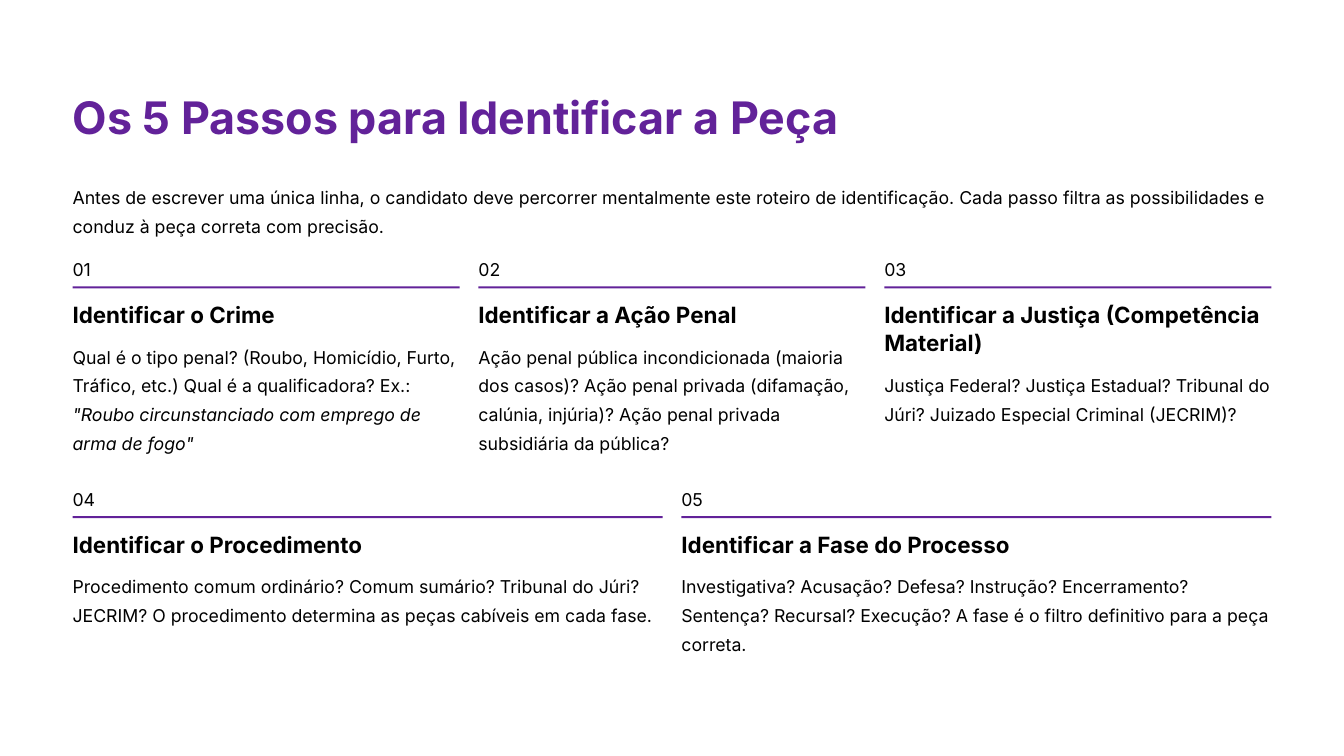
import dataclasses

import pptx
import pptx.dml.color
import pptx.enum.shapes
import pptx.enum.text
import pptx.shapes.autoshape
import pptx.slide
import pptx.text.text
import pptx.util

PURPLE = pptx.dml.color.RGBColor(0x62, 0x22, 0x99)
BLACK = pptx.dml.color.RGBColor(0, 0, 0)
FONT = "Inter"
SLIDE_W = 10
SLIDE_H = SLIDE_W * 9 / 16
MARGIN = 0.54
GAP = 0.14
CONTENT_W = SLIDE_W - 2 * MARGIN
HEADING_LINE = 0.21
RULE_H = 1.1 / 72
TOP = pptx.enum.text.MSO_ANCHOR.TOP
MIDDLE = pptx.enum.text.MSO_ANCHOR.MIDDLE


@dataclasses.dataclass(frozen=True)
class Style:
    size: float
    leading: float | None = None
    bold: bool = False
    color: pptx.dml.color.RGBColor = BLACK


@dataclasses.dataclass(frozen=True)
class Box:
    x: float
    y: float
    w: float
    h: float

    def emu(self) -> list[int]:
        return [pptx.util.Inches(v) for v in (self.x, self.y, self.w, self.h)]


@dataclasses.dataclass(frozen=True)
class Step:
    heading: str
    heading_w: float
    body: str
    example: str = ""
    heading_lines: int = 1


@dataclasses.dataclass(frozen=True)
class Row:
    top: float
    bottom: float
    steps: tuple[Step, ...]


TITLE = Style(24, 30.5, True, PURPLE)
HEADING = Style(12, 15, True)
BODY = Style(9.5, 15.5)
NUMBER = Style(9.5)

ROWS = (
    Row(1.92, 3.39, (
        Step("Identificar o Crime", 1.7,
             "Qual é o tipo penal? (Roubo, Homicídio, Furto, Tráfico, etc.) "
             "Qual é a qualificadora? Ex.: ",
             example='"Roubo circunstanciado com emprego de arma de fogo"'),
        Step("Identificar a Ação Penal", 1.96,
             "Ação penal pública incondicionada (maioria dos casos)? Ação penal "
             "privada (difamação, calúnia, injúria)? Ação penal privada "
             "subsidiária da pública?"),
        Step("Identificar a Justiça (Competência Material)", 2.88,
             "Justiça Federal? Justiça Estadual? Tribunal do Júri? Juizado "
             "Especial Criminal (JECRIM)?",
             heading_lines=2),
    )),
    Row(3.63, 4.89, (
        Step("Identificar o Procedimento", 2.19,
             "Procedimento comum ordinário? Comum sumário? Tribunal do Júri? "
             "JECRIM? O procedimento determina as peças cabíveis em cada fase."),
        Step("Identificar a Fase do Processo", 2.49,
             "Investigativa? Acusação? Defesa? Instrução? Encerramento? "
             "Sentença? Recursal? Execução? A fase é o filtro definitivo para "
             "a peça correta."),
    )),
)


def write(s: pptx.shapes.autoshape.Shape, text: str, style: Style,
          wrap: bool = True, anchor=TOP) -> pptx.text.text._Paragraph:
    tf = s.text_frame
    tf.margin_left = tf.margin_right = tf.margin_top = tf.margin_bottom = 0
    tf.auto_size = pptx.enum.text.MSO_AUTO_SIZE.NONE
    tf.word_wrap = wrap
    tf.vertical_anchor = anchor
    p = tf.paragraphs[0]
    p.alignment = pptx.enum.text.PP_ALIGN.LEFT
    if style.leading:
        p.line_spacing = pptx.util.Pt(style.leading)
    p.font.name = FONT
    p.font.size = pptx.util.Pt(style.size)
    p.font.bold = style.bold
    p.font.color.rgb = style.color
    p.add_run().text = text
    return p


def add_text(slide: pptx.slide.Slide, box: Box, text: str, style: Style,
             wrap: bool = True, anchor=TOP) -> pptx.text.text._Paragraph:
    return write(slide.shapes.add_textbox(*box.emu()), text, style, wrap, anchor)


def add_rule(slide: pptx.slide.Slide, box: Box) -> None:
    s = slide.shapes.add_shape(pptx.enum.shapes.MSO_SHAPE.RECTANGLE, *box.emu())
    s.shadow.inherit = False
    s.fill.solid()
    s.fill.fore_color.rgb = PURPLE
    s.line.fill.background()


def add_step(slide: pptx.slide.Slide, step: Step, number: int,
             x: float, w: float, row: Row) -> None:
    heading_h = step.heading_lines * HEADING_LINE
    body_y = row.top + 0.39 + heading_h
    add_text(slide, Box(x, row.top, 0.27, 0.17), f"{number:02}", NUMBER,
             wrap=False, anchor=MIDDLE)
    add_rule(slide, Box(x, row.top + 0.21, w, RULE_H))
    add_text(slide, Box(x, row.top + 0.31, step.heading_w, heading_h),
             step.heading, HEADING, wrap=step.heading_lines > 1)
    p = add_text(slide, Box(x, body_y, w, row.bottom - body_y), step.body, BODY)
    if step.example:
        r = p.add_run()
        r.text = step.example
        r.font.italic = True


def main() -> None:
    prs = pptx.Presentation()
    prs.slide_width = pptx.util.Inches(SLIDE_W)
    prs.slide_height = pptx.util.Inches(SLIDE_H)
    slide = prs.slides.add_slide(prs.slide_layouts.get_by_name("Title Only"))

    title = slide.shapes.title
    title.left, title.top, title.width, title.height = Box(MARGIN, 0.64, 5.8, 0.42).emu()
    write(title, "Os 5 Passos para Identificar a Peça", TITLE, wrap=False)
    add_text(slide, Box(MARGIN, 1.33, CONTENT_W, 0.43),
             "Antes de escrever uma única linha, o candidato deve percorrer "
             "mentalmente este roteiro de identificação. Cada passo filtra as "
             "possibilidades e conduz à peça correta com precisão.", BODY)

    number = 0
    for row in ROWS:
        columns = len(row.steps)
        w = (CONTENT_W - GAP * (columns - 1)) / columns
        for column, step in enumerate(row.steps):
            number += 1
            add_step(slide, step, number, MARGIN + column * (w + GAP), w, row)

    prs.save("out.pptx")


if __name__ == "__main__":
    main()
